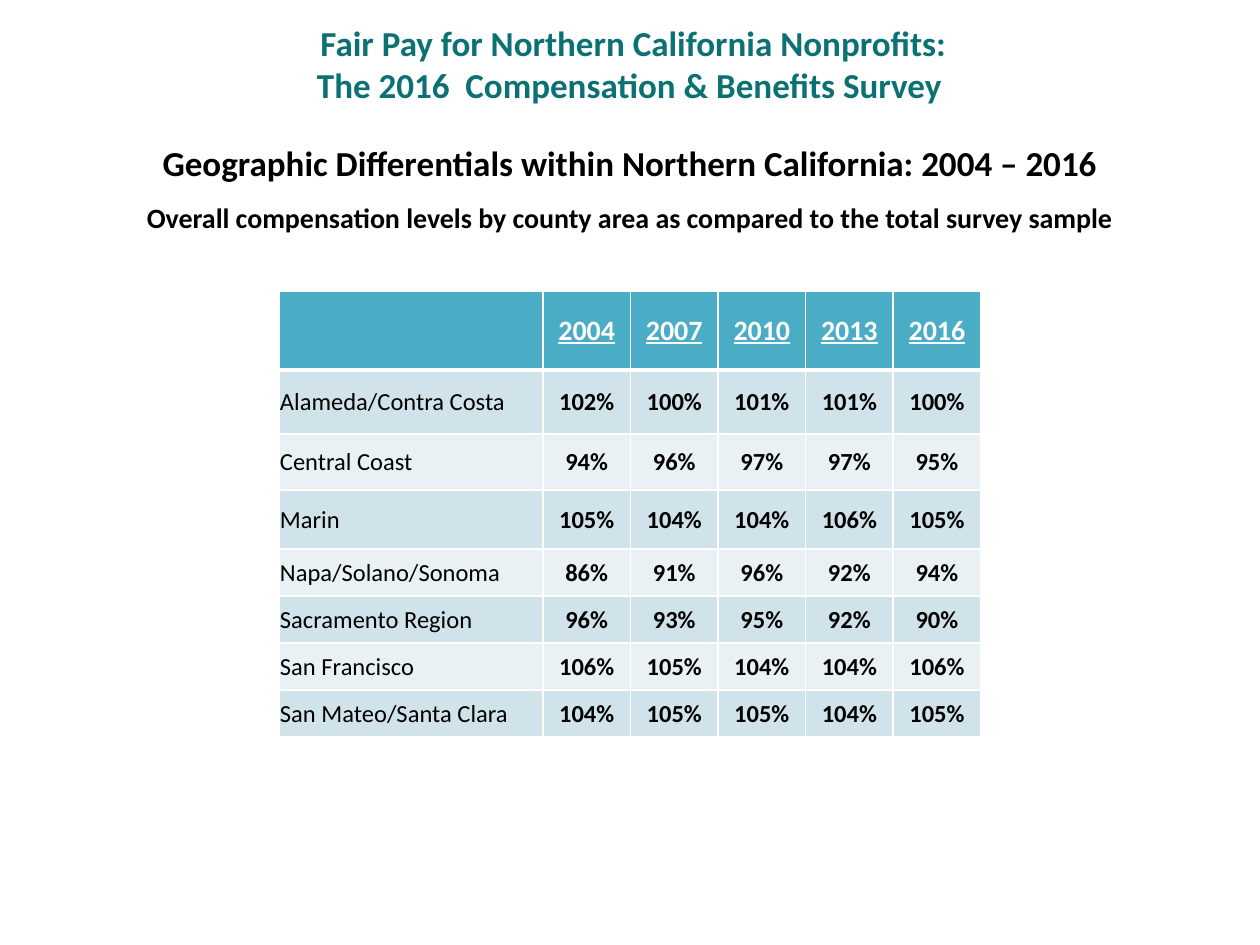
from lxml import etree
from pptx import Presentation
from pptx.dml.color import RGBColor
from pptx.enum.text import MSO_ANCHOR, MSO_AUTO_SIZE, PP_ALIGN
from pptx.oxml.ns import qn
from pptx.util import Pt

MID, TOP = MSO_ANCHOR.MIDDLE, MSO_ANCHOR.TOP
LEFT, CENTER = PP_ALIGN.LEFT, PP_ALIGN.CENTER
FIXED = MSO_AUTO_SIZE.NONE

TEAL = RGBColor(0x0B, 0x71, 0x73)
BLACK = RGBColor(0, 0, 0)
WHITE = RGBColor(0xFF, 0xFF, 0xFF)
HEAD = RGBColor(0x4B, 0xAC, 0xC6)
BANDS = RGBColor(0xD0, 0xE3, 0xEA), RGBColor(0xE9, 0xF1, 0xF5)
FACE = "Calibri"
SCALE = 914400 / 126

TITLE = [
    ("Fair Pay for Northern California Nonprofits:", 20, 0),
    ("The 2016  Compensation & Benefits Survey ", 20, 0),
]
LEAD = [
    ("Geographic Differentials within Northern California: 2004 – 2016", 20, 0),
    ("Overall compensation levels by county area as compared to the total survey sample", 16, 10),
]
YEARS = [2004, 2007, 2010, 2013, 2016]
AREAS = [
    ("Alameda/Contra Costa", 64, [102, 100, 101, 101, 100]),
    ("Central Coast", 56, [94, 96, 97, 97, 95]),
    ("Marin", 59, [105, 104, 104, 106, 105]),
    ("Napa/Solano/Sonoma", 47, [86, 91, 96, 92, 94]),
    ("Sacramento Region", 47, [96, 93, 95, 92, 90]),
    ("San Francisco", 47, [106, 105, 104, 104, 106]),
    ("San Mateo/Santa Clara", 47, [104, 105, 105, 104, 105]),
]
HEAD_H, AREA_W, YEARS_W = 79, 264, 438


def px(n):
    return round(n * SCALE)


def style(para, size, color, bold=True, align=CENTER):
    para.alignment = align
    font = para.font
    font.name, font.size, font.bold = FACE, Pt(size), bold
    font.color.rgb = color


def fill_box(box, rect, lines, color, anchor):
    box.left, box.top, box.width, box.height = map(px, rect)
    frame = box.text_frame
    frame.word_wrap = True
    frame.auto_size = FIXED
    frame.vertical_anchor = anchor
    for i, (text, size, gap) in enumerate(lines):
        para = frame.add_paragraph() if i else frame.paragraphs[0]
        para.text = text
        para.space_before = Pt(gap)
        style(para, size, color)


def edge(cell, widths):
    props = cell._tc.get_or_add_tcPr()
    for i, (side, width) in enumerate(zip("LRTB", widths)):
        line = etree.Element(qn(f"a:ln{side}"), w=str(Pt(width)))
        solid = etree.SubElement(line, qn("a:solidFill"))
        etree.SubElement(solid, qn("a:srgbClr"), val=str(WHITE))
        props.insert(i, line)


def fill_table(slide):
    rows = [("", HEAD_H, [str(y) for y in YEARS])]
    rows += [(area, high, [f"{v}%" for v in vals]) for area, high, vals in AREAS]
    wide = AREA_W + YEARS_W
    high = sum(row[1] for row in rows)
    table = slide.shapes.add_table(
        len(rows), len(YEARS) + 1, px(279), px(291), px(wide), px(high)).table
    for c, col in enumerate(table.columns):
        col.width = px(YEARS_W / len(YEARS) if c else AREA_W)
    for r, (area, high, vals) in enumerate(rows):
        table.rows[r].height = px(high)
        for c, text in enumerate([area] + vals):
            cell = table.cell(r, c)
            cell.text = text
            cell.vertical_anchor = MID
            cell.fill.solid()
            cell.fill.fore_color.rgb = BANDS[(r - 1) % 2] if r else HEAD
            edge(cell, (1, 1, 3 if r == 1 else 1, 1 if r else 3))
            para = cell.text_frame.paragraphs[0]
            if r:
                cell.margin_left = cell.margin_right = cell.margin_top = px(1)
                cell.margin_bottom = 0
                style(para, 14, BLACK, c > 0, CENTER if c else LEFT)
            else:
                style(para, 16, WHITE)
                para.font.underline = True


def main():
    deck = Presentation()
    deck.slide_width, deck.slide_height = px(1260), px(945)
    slide = deck.slides.add_slide(deck.slide_layouts[0])
    title, lead = slide.placeholders
    fill_box(title, (135, 22, 997, 84), TITLE, TEAL, MID)
    fill_box(lead, (0, 135, 1260, 106), LEAD, BLACK, TOP)
    fill_table(slide)
    deck.save("out.pptx")


if __name__ == "__main__":
    main()
